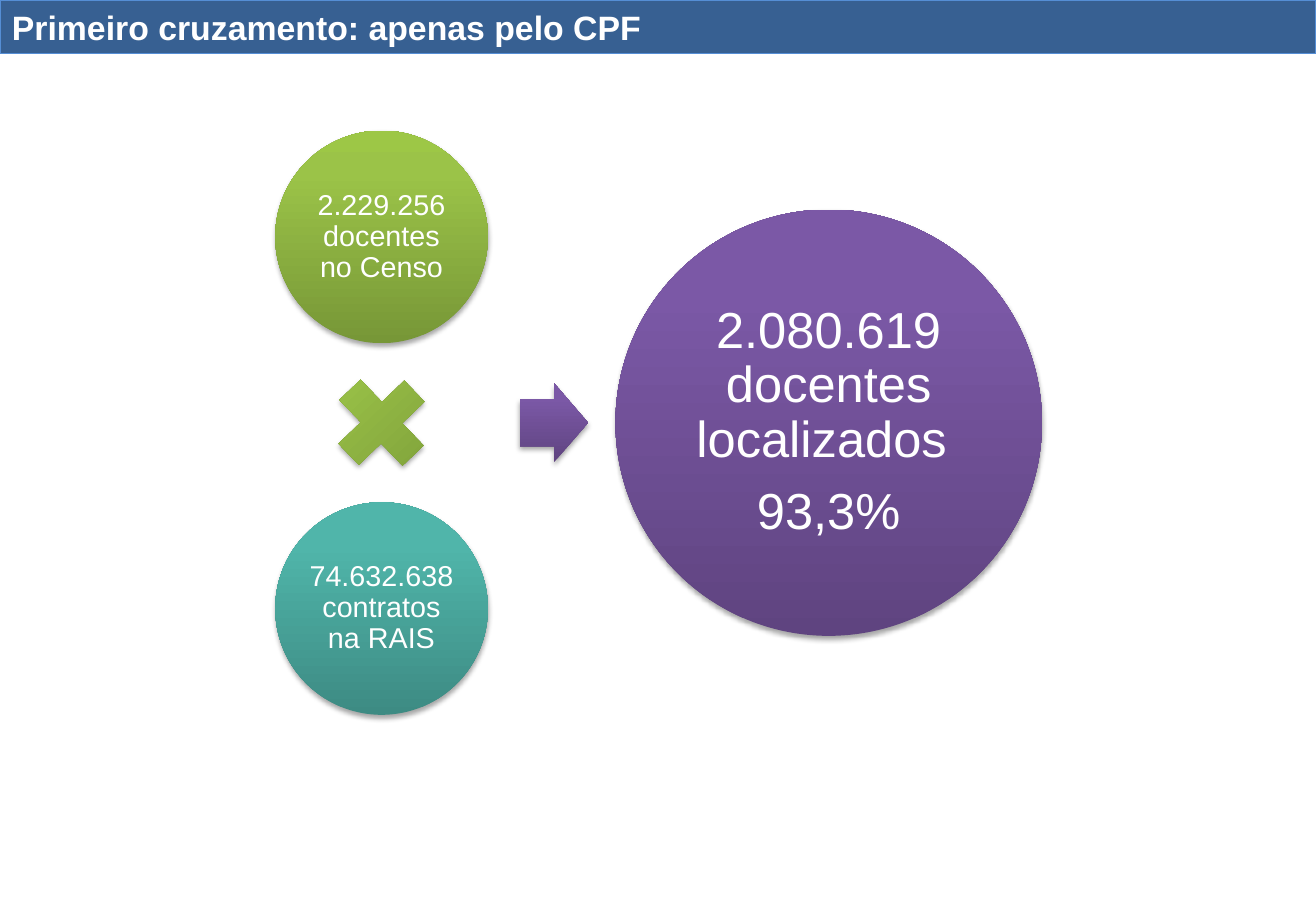
from copy import deepcopy

from lxml.etree import SubElement
from pptx import Presentation
from pptx.dml.color import RGBColor as Rgb
from pptx.enum.shapes import MSO_SHAPE as Preset
from pptx.enum.text import MSO_ANCHOR as Anchor, MSO_AUTO_SIZE as AutoSize, PP_ALIGN as Align
from pptx.oxml.ns import qn
from pptx.util import Inches, Pt

COLORS = {
    "bar": "376092",
    "bar_line": "558ED5",
    "text": "FFFFFF",
    "shadow": "000000",
}
GRADIENTS = {
    "green": ("779737", "9BC348", "9DC746"),
    "teal": ("3D8B83", "50B5AA", "4EB8AC"),
    "purple": ("5F4480", "7B58A6", "7C57A8"),
}
STOPS = (0, 0.8, 1)
SHADOW = {"blurRad": Pt(3.1), "dist": Pt(1.8), "dir": 90 * 60000, "rotWithShape": 0}


class CrossingSlide:
    def __init__(self, slide, font="Arial"):
        self.slide = slide
        self.font = font

    def apply(self, target, values):
        for name, value in values.items():
            setattr(target, name, value)

    def label(self, shape, paragraphs, size, inset=None, bold=False, paragraph_style=None):
        frame = shape.text_frame
        frame.word_wrap = True
        frame.vertical_anchor = Anchor.MIDDLE
        if inset is not None:
            sides = ("left", "right", "top", "bottom")
            self.apply(frame, {f"margin_{side}": Inches(inset) for side in sides})
        for index, text in enumerate(paragraphs):
            paragraph = frame.add_paragraph() if index else frame.paragraphs[0]
            self.apply(paragraph, paragraph_style or {})
            run = paragraph.add_run()
            run.text = text
            self.apply(run.font, {"name": self.font, "size": Pt(size), "bold": bold})
            run.font.color.rgb = Rgb.from_string(COLORS["text"])

    def title_bar(self, title, width, height):
        bar = self.slide.shapes.add_shape(
            Preset.RECTANGLE, 0, 0, Inches(width), Inches(height))
        bar.shadow.inherit = False
        bar.fill.solid()
        bar.fill.fore_color.rgb = Rgb.from_string(COLORS["bar"])
        bar.line.color.rgb = Rgb.from_string(COLORS["bar_line"])
        bar.line.width = Pt(0.75)
        self.label(bar, [title], 20, bold=True, paragraph_style={"alignment": Align.LEFT})
        bar.text_frame.auto_size = AutoSize.SHAPE_TO_FIT_TEXT

    def glossy(self, preset, center, size, gradient, rotation=0):
        (x, y), (width, height) = center, size
        shape = self.slide.shapes.add_shape(
            preset, Inches(x - width / 2), Inches(y - height / 2),
            Inches(width), Inches(height))
        shape.rotation = rotation
        shape.line.fill.background()
        self.shade(shape, gradient)
        self.cast_shadow(shape)
        return shape

    def shade(self, shape, gradient):
        shape.fill.gradient()
        shape.fill.gradient_angle = 90
        stop_list = next(shape.element.spPr.iter(qn("a:gsLst")))
        stop_list.append(deepcopy(stop_list[-1]))
        for stop, position, color in zip(
                shape.fill.gradient_stops, STOPS, GRADIENTS[gradient]):
            stop.position = position
            stop.color.rgb = Rgb.from_string(color)

    def cast_shadow(self, shape):
        shape.shadow.inherit = False
        effects = shape.element.spPr.find(qn("a:effectLst"))
        outer = SubElement(effects, qn("a:outerShdw"),
                           {name: str(value) for name, value in SHADOW.items()})
        color = SubElement(outer, qn("a:srgbClr"), val=COLORS["shadow"])
        SubElement(color, qn("a:alpha"), val="35000")

    def circle(self, center, diameter, gradient, paragraphs, size, inset):
        circle = self.glossy(Preset.OVAL, center, (diameter, diameter), gradient)
        self.label(circle, paragraphs, size, inset, paragraph_style={
            "alignment": Align.CENTER,
            "line_spacing": 0.9,
            "space_after": Pt(round(size * 0.35, 1)),
        })


def main():
    deck = Presentation()
    deck.slide_width, deck.slide_height = Inches(10.83), Inches(7.5)
    crossing = CrossingSlide(deck.slides.add_slide(deck.slide_layouts[6]))
    crossing.title_bar("Primeiro cruzamento: apenas pelo CPF", 10.83, 0.44)

    source_x, middle_y, source_offset = 3.14, 3.48, 1.53
    sources = (
        (-1, "green", "2.229.256 docentes no Censo"),
        (1, "teal", "74.632.638 contratos na RAIS"),
    )
    for direction, gradient, text in sources:
        center = (source_x, middle_y + direction * source_offset)
        crossing.circle(center, 1.75, gradient, [text], 17, 0.02)

    crossing.glossy(Preset.MATH_PLUS, (source_x, middle_y), (1.02, 1.02), "green", 316.2)
    arrow = crossing.glossy(Preset.RIGHT_ARROW, (4.56, middle_y), (0.56, 0.65), "purple")
    arrow.adjustments[0] = 0.6
    arrow.adjustments[1] = 0.5
    crossing.circle((6.82, middle_y), 3.51, "purple",
                    ["2.080.619 docentes localizados ", "93,3%"], 30, 0.04)

    deck.save("out.pptx")


if __name__ == "__main__":
    main()
